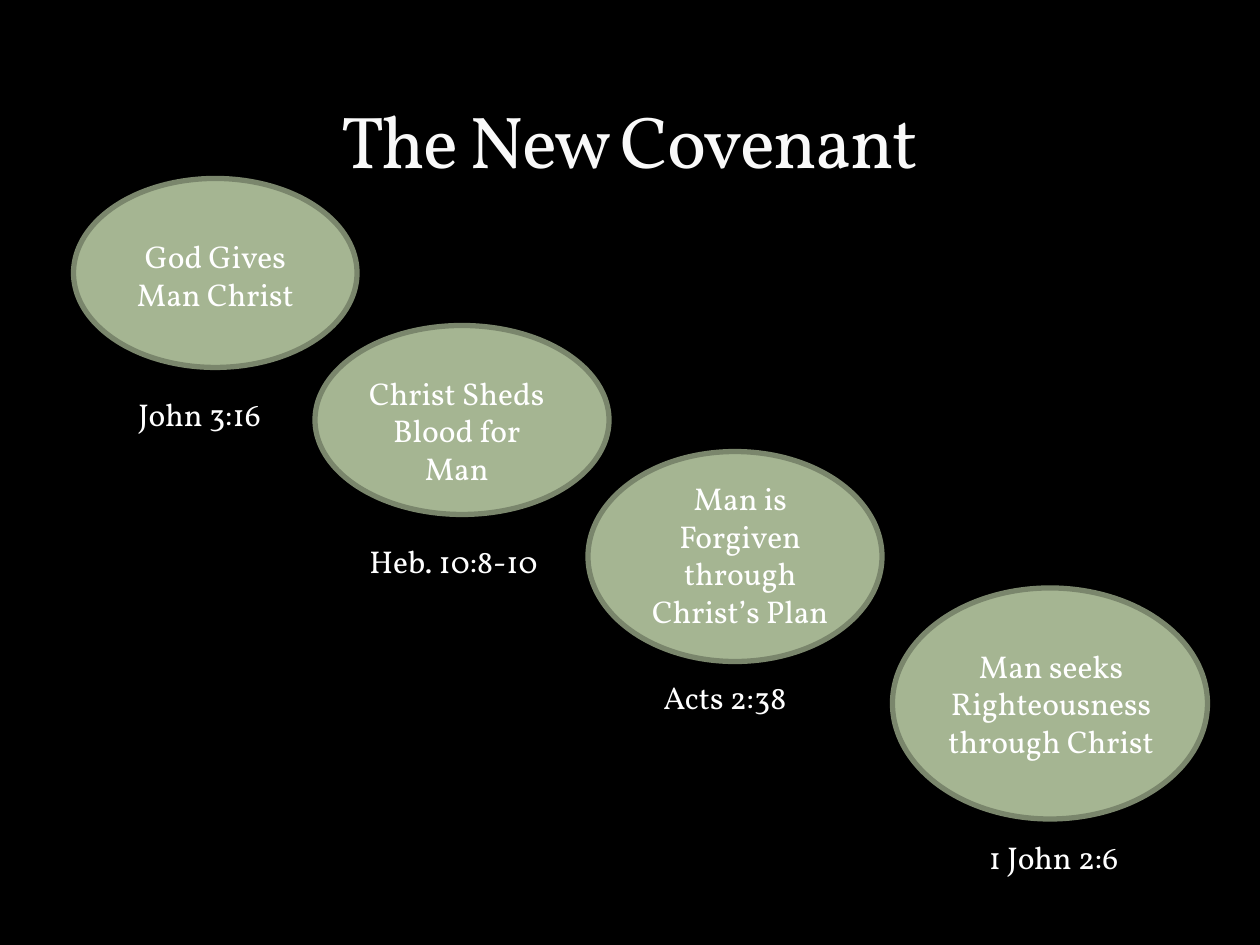
from lxml.etree import fromstring
from pptx import Presentation
from pptx.dml.color import RGBColor
from pptx.enum.shapes import MSO_SHAPE
from pptx.enum.text import MSO_ANCHOR, MSO_AUTO_SIZE, PP_ALIGN
from pptx.oxml.ns import nsdecls
from pptx.util import Pt

# Content: px boxes as (left, top, width, height)
TITLE = ("The New Covenant", (60, 20, 1080, 160))
STEPS = [
    {"text": "God Gives Man Christ", "oval": (70, 170, 270, 180),
     "box": (100, 220, 210, 85), "verse": "John 3:16", "label": (120, 370, 150, 48)},
    {"text": "Christ Sheds Blood for Man", "oval": (300, 310, 280, 180),
     "box": (330, 350, 210, 85), "verse": "Heb. 10:8-10", "label": (340, 510, 200, 48)},
    {"text": "Man is Forgiven through Christ’s Plan", "oval": (560, 430, 280, 200),
     "box": (600, 450, 210, 157), "verse": "Acts 2:38", "label": (620, 640, 150, 48)},
    {"text": "Man seeks Righteousness through Christ", "oval": (850, 560, 300, 220),
     "box": (880, 610, 242, 204), "verse": "1 John 2:6", "label": (930, 792, 150, 48)},
]


class Theme:
    font = "Vollkorn"
    background = RGBColor(0, 0, 0)
    title = RGBColor(0xF9, 0xF9, 0xF9)
    text = RGBColor(0xFF, 0xFF, 0xFF)
    oval = RGBColor(0xA5, 0xB5, 0x92)
    oval_line = RGBColor(0x7A, 0x86, 0x6C)
    title_outline = "3C4422"
    title_size, text_size, line_width = Pt(42), Pt(18), Pt(3)


PX = 914400 // 120  # 120 px to the inch


def emu(box):
    return [v * PX for v in box]


def add_text(shapes, text, box, size=Theme.text_size, color=Theme.text,
             align=PP_ALIGN.LEFT, anchor=MSO_ANCHOR.TOP, fit=MSO_AUTO_SIZE.SHAPE_TO_FIT_TEXT):
    tf = shapes.add_textbox(*emu(box)).text_frame
    tf.word_wrap, tf.auto_size, tf.vertical_anchor = True, fit, anchor
    p = tf.paragraphs[0]
    p.alignment = align
    r = p.add_run()
    r.text = text
    r.font.name, r.font.size = Theme.font, size
    r.font.color.rgb = color
    return r


def add_oval(shapes, box):
    sp = shapes.add_shape(MSO_SHAPE.OVAL, *emu(box))
    sp.shadow.inherit = False
    sp.fill.solid()
    sp.fill.fore_color.rgb = Theme.oval
    sp.line.color.rgb = Theme.oval_line
    sp.line.width = Theme.line_width


prs = Presentation()
prs.slide_width, prs.slide_height = 1200 * PX, 900 * PX
s = prs.slides.add_slide(prs.slide_layouts[6])
s.background.fill.solid()
s.background.fill.fore_color.rgb = Theme.background

# Title with tight spacing and a faint outline
r = add_text(s.shapes, *TITLE, size=Theme.title_size, color=Theme.title,
             align=PP_ALIGN.CENTER, anchor=MSO_ANCHOR.BOTTOM, fit=MSO_AUTO_SIZE.NONE)
rPr = r.font._element
rPr.set("spc", "-100")
rPr.insert(0, fromstring(
    f'<a:ln {nsdecls("a")} w="{Pt(0.25)}"><a:solidFill><a:srgbClr val="{Theme.title_outline}">'
    '<a:alpha val="25000"/></a:srgbClr></a:solidFill></a:ln>'))

# Steps: an oval grouped with its text
for step in STEPS:
    group = s.shapes.add_group_shape()
    add_oval(group.shapes, step["oval"])
    add_text(group.shapes, step["text"], step["box"], align=PP_ALIGN.CENTER)

# Verse under each step
for step in STEPS:
    add_text(s.shapes, step["verse"], step["label"])

prs.save("out.pptx")
